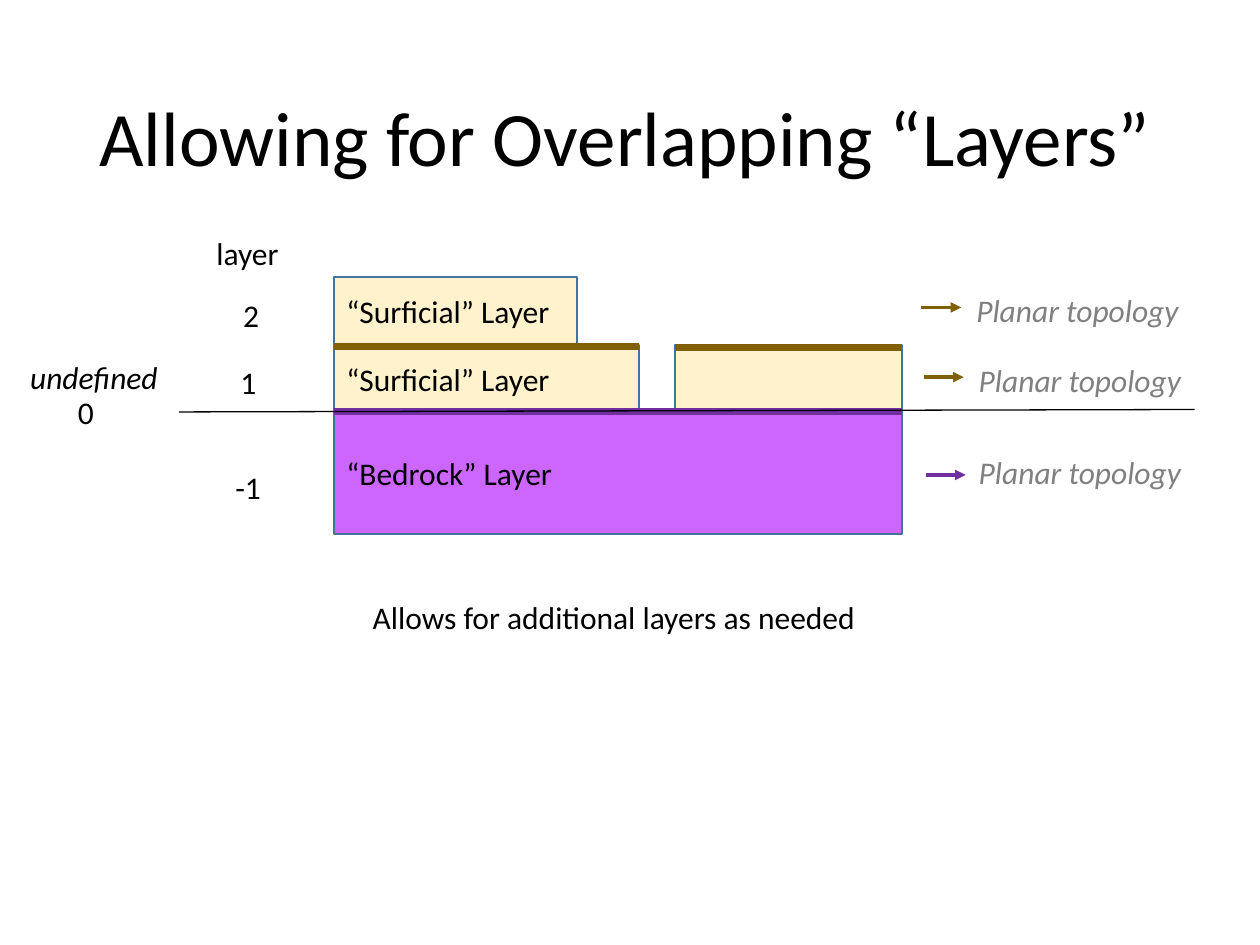
import pptx
import pptx.util
import pptx.dml.color
import pptx.enum.shapes
import pptx.enum.text
import pptx.oxml
import pptx.oxml.ns

Pt = pptx.util.Pt
RGBColor = pptx.dml.color.RGBColor
PP_ALIGN = pptx.enum.text.PP_ALIGN
MSO_ANCHOR = pptx.enum.text.MSO_ANCHOR

BLACK = RGBColor(0x00, 0x00, 0x00)
GRAY = RGBColor(0x80, 0x80, 0x80)
CREAM = RGBColor(0xFF, 0xF2, 0xCC)
VIOLET = RGBColor(0xCC, 0x66, 0xFF)
OUTLINE = RGBColor(0x43, 0x73, 0x9E)
BROWN = RGBColor(0x80, 0x60, 0x00)
PURPLE = RGBColor(0x70, 0x30, 0xA0)

FONT = "Calibri"
SECTION_LEFT = 190.8
SECTION_RIGHT = 515.5
LAYER_HEIGHT = 38.9
LABEL_HEIGHT = 28.8


def write_text(shape, text, size=18, color=BLACK, italic=False,
               align=PP_ALIGN.LEFT, anchor=MSO_ANCHOR.TOP):
    text_frame = shape.text_frame
    text_frame.text = text
    text_frame.vertical_anchor = anchor
    paragraph = text_frame.paragraphs[0]
    paragraph.alignment = align
    font = paragraph.runs[0].font
    font.name = FONT
    font.size = Pt(size)
    font.italic = italic
    font.color.rgb = color
    return paragraph


def add_title(slide, text):
    box = slide.shapes.add_textbox(Pt(49.7), Pt(28.8), Pt(620.6), Pt(104.4))
    box.text_frame.word_wrap = True
    paragraph = write_text(box, text, size=44, anchor=MSO_ANCHOR.MIDDLE)
    paragraph.line_spacing = 0.9


def add_label(slide, text, left, top, width, wrap=False, **style):
    box = slide.shapes.add_textbox(Pt(left), Pt(top), Pt(width), Pt(LABEL_HEIGHT))
    box.text_frame.word_wrap = wrap
    box.text_frame.auto_size = pptx.enum.text.MSO_AUTO_SIZE.SHAPE_TO_FIT_TEXT
    write_text(box, text, **style)


def add_layer(slide, left, top, width, height, fill, text=None):
    shape = slide.shapes.add_shape(
        pptx.enum.shapes.MSO_SHAPE.RECTANGLE, Pt(left), Pt(top), Pt(width), Pt(height))
    shape.shadow.inherit = False
    shape.fill.solid()
    shape.fill.fore_color.rgb = fill
    shape.line.color.rgb = OUTLINE
    shape.line.width = Pt(1)
    if text:
        write_text(shape, text, anchor=MSO_ANCHOR.MIDDLE)


def add_line(slide, start, end, color, width, arrow=False):
    connector = slide.shapes.add_connector(
        pptx.enum.shapes.MSO_CONNECTOR.STRAIGHT,
        Pt(start[0]), Pt(start[1]), Pt(end[0]), Pt(end[1]))
    connector.line.color.rgb = color
    connector.line.width = Pt(width)
    properties = connector.element.spPr
    properties.append(pptx.oxml.parse_xml(
        f"<a:effectLst {pptx.oxml.ns.nsdecls('a')}/>"))
    if arrow:
        line = properties.find(pptx.oxml.ns.qn("a:ln"))
        line.append(pptx.oxml.parse_xml(
            f'<a:tailEnd {pptx.oxml.ns.nsdecls("a")} type="triangle"/>'))


def add_section(slide):
    # Bedrock and the first surficial layer
    add_layer(slide, SECTION_LEFT, 234.7, SECTION_RIGHT - SECTION_LEFT, 70.6,
              VIOLET, "“Bedrock” Layer")
    add_layer(slide, SECTION_LEFT, 197.3, 174.2, LAYER_HEIGHT, CREAM, "“Surficial” Layer")
    add_layer(slide, 385.9, 197.3, SECTION_RIGHT - 385.9, LAYER_HEIGHT, CREAM)

    # Top contacts and the ground line
    add_line(slide, (385.9, 198.7), (SECTION_RIGHT, 198.7), BROWN, 4)
    add_line(slide, (SECTION_LEFT, 235.4), (SECTION_RIGHT, 235.4), PURPLE, 4)
    add_line(slide, (102.2, 235.4), (682.6, 234), BLACK, 0.75)

    # Second surficial layer, with the contact beneath it
    add_layer(slide, SECTION_LEFT, 158.4, 139, LAYER_HEIGHT, CREAM, "“Surficial” Layer")
    add_line(slide, (SECTION_LEFT, 198), (365, 198), BROWN, 4)


def add_layer_numbers(slide):
    for text, left, top, width in (
            ("layer", 116.6, 130.3, 50.4),
            ("2", 131.8, 165.6, 23.8),
            ("1", 130.3, 203.8, 23.8),
            ("-1", 127.4, 264.2, 29.5),
            ("0", 37.4, 221, 23.8)):
        add_label(slide, text, left, top, width)
    add_label(slide, "undefined", 5.8, 200.9, 95.8, wrap=True,
              italic=True, align=PP_ALIGN.CENTER)


def add_topology_notes(slide):
    for label_left, label_top, arrow_left, arrow_y, color in (
            (550.8, 162.7, 526.5, 175.7, BROWN),
            (552.2, 202.7, 527.9, 215.5, BROWN),
            (552.2, 255.6, 529, 271.4, PURPLE)):
        add_label(slide, "Planar topology", label_left, label_top, 131,
                  color=GRAY, italic=True)
        add_line(slide, (arrow_left, arrow_y), (arrow_left + 22.8, arrow_y),
                 color, 2, arrow=True)


def main():
    presentation = pptx.Presentation()
    presentation.slide_width = Pt(720)
    presentation.slide_height = Pt(540)
    slide = presentation.slides.add_slide(presentation.slide_layouts[6])

    add_title(slide, "Allowing for Overlapping “Layers”")
    add_section(slide)
    add_layer_numbers(slide)
    add_topology_notes(slide)
    add_label(slide, "Allows for additional layers as needed", 205.9, 338.4, 293.8)

    presentation.save("out.pptx")


if __name__ == "__main__":
    main()
